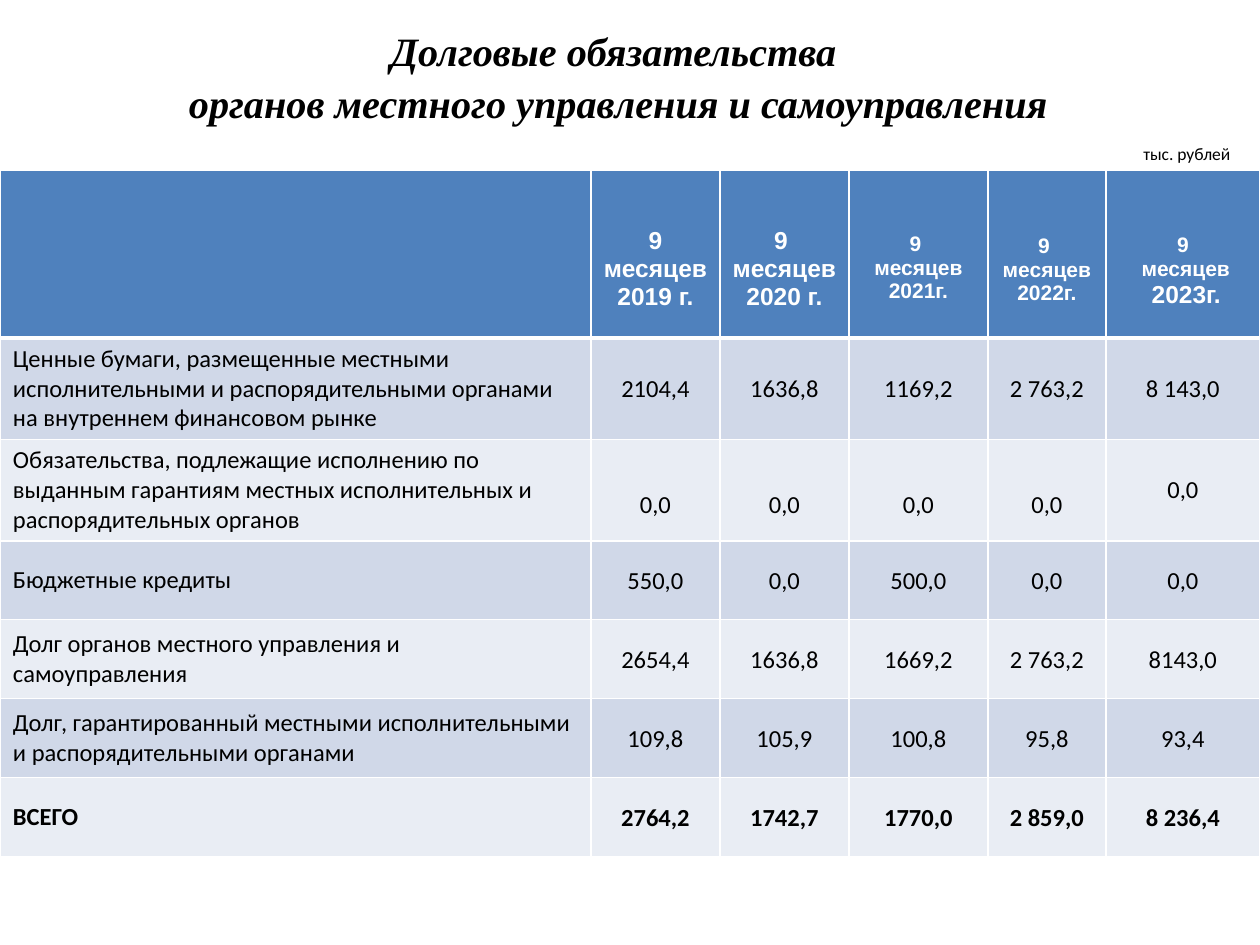
import pptx
import pptx.util
import pptx.dml.color
import pptx.enum.text
import pptx.oxml
import pptx.oxml.ns

PX = 914400 // 126
RGB = pptx.dml.color.RGBColor
WHITE, BLACK = RGB(0xFF, 0xFF, 0xFF), RGB(0, 0, 0)
BLUE = RGB(0x4F, 0x81, 0xBD)
BANDS = [RGB(0xD0, 0xD8, 0xE8), RGB(0xE9, 0xED, 0xF4)]
CENTER = pptx.enum.text.PP_ALIGN.CENTER
LEFT = pptx.enum.text.PP_ALIGN.LEFT
MIDDLE = pptx.enum.text.MSO_ANCHOR.MIDDLE


def add_text(p, text, size, color, align, **fmt):
    p.alignment = align
    p.text = text
    for r in p.runs:
        r.font.size = pptx.util.Pt(size)
        r.font.color.rgb = color
        for name, value in fmt.items():
            setattr(r.font, name, value)


def format_cell(cell, fill, margins, bottom=1):
    tc_pr = cell._tc.get_or_add_tcPr()
    for side, width in zip("LRTB", (1, 1, 1, bottom)):
        tc_pr.append(pptx.oxml.parse_xml(
            f'<a:ln{side} {pptx.oxml.ns.nsdecls("a")} w="{width * 12700}">'
            f'<a:solidFill><a:srgbClr val="{WHITE}"/></a:solidFill></a:ln{side}>'))
    cell.fill.solid()
    cell.fill.fore_color.rgb = fill
    cell.vertical_anchor = MIDDLE
    for side, value in zip(("left", "top", "right", "bottom"), margins):
        setattr(cell, f"margin_{side}", value * PX)


prs = pptx.Presentation()
prs.slide_width, prs.slide_height = 1260 * PX, 945 * PX
s = prs.slides.add_slide(prs.slide_layouts[5])

# Title
sp = s.shapes.title
sp.left, sp.top, sp.width, sp.height = 52 * PX, -4 * PX, 1134 * PX, 158 * PX
sp.text_frame.vertical_anchor = MIDDLE
p = sp.text_frame.paragraphs[0]
add_text(p, "Долговые обязательства \vорганов местного управления и самоуправления",
         23, BLACK, CENTER, name="Times New Roman", bold=True, italic=True)
p.line_spacing = 1.06

# Table grid
widths = [591, 129, 129, 139, 118, 154]
heights = [168, 101, 101, 79, 79, 79, 79]
table = s.shapes.add_table(len(heights), len(widths), 0, 170 * PX,
                           sum(widths) * PX, sum(heights) * PX).table
for column, width in zip(table.columns, widths):
    column.width = width * PX
for row, height in zip(table.rows, heights):
    row.height = height * PX

# Header row: lines, their sizes, top margin
headers = [
    ([], [], 6),
    (["9 месяцев", "2019 г."], [14, 14], 36),
    (["9 ", "месяцев", "2020 г."], [14, 14, 14], 36),
    (["9 ", "месяцев", "2021г."], [12, 12, 12], 34),
    (["9 ", "месяцев", "2022г."], [12, 12, 12], 38),
    (["9", " месяцев", " 2023г."], [12, 12, 14], 40),
]
for col, (lines, sizes, top) in enumerate(headers):
    cell = table.cell(0, col)
    format_cell(cell, BLUE, (10, top, 10, 6), bottom=3)
    tf = cell.text_frame
    for i, (line, size) in enumerate(zip(lines, sizes)):
        p = tf.add_paragraph() if i else tf.paragraphs[0]
        add_text(p, line, size, WHITE, CENTER, name="Arial", bold=True)

# Body rows
rows = [
    ["Ценные бумаги, размещенные местными исполнительными и распорядительными "
     "органами на внутреннем финансовом рынке",
     "2104,4", "1636,8", "1169,2", "2 763,2", "8 143,0"],
    ["Обязательства, подлежащие исполнению по выданным гарантиям местных "
     "исполнительных и распорядительных органов", "0,0", "0,0", "0,0", "0,0", "0,0"],
    ["Бюджетные кредиты", "550,0", "0,0", "500,0", "0,0", "0,0"],
    ["Долг органов местного управления и самоуправления",
     "2654,4", "1636,8", "1669,2", "2 763,2", "8143,0"],
    ["Долг, гарантированный местными исполнительными и распорядительными органами",
     "109,8", "105,9", "100,8", "95,8", "93,4"],
    ["ВСЕГО", "2764,2", "1742,7", "1770,0", "2 859,0", "8 236,4"],
]
for i, values in enumerate(rows):
    for col, value in enumerate(values):
        margins = (13, 6, 13, 6) if col == 0 or i < 2 else (1, 1, 1, 0)
        if i == 1 and 0 < col < 5:  # guarantee amounts sit lower
            margins = (13, 36, 13, 6)
        cell = table.cell(i + 1, col)
        format_cell(cell, BANDS[i % 2], margins)
        add_text(cell.text_frame.paragraphs[0], value, 14, BLACK,
                 CENTER if col else LEFT, name="Calibri", bold=i == len(rows) - 1)

# Unit note
tf = s.shapes.add_textbox(1131 * PX, 137 * PX, 113 * PX, 34 * PX).text_frame
tf.word_wrap = False
add_text(tf.paragraphs[0], "тыс. рублей", 10, BLACK, LEFT, name="Calibri")

prs.save("out.pptx")
